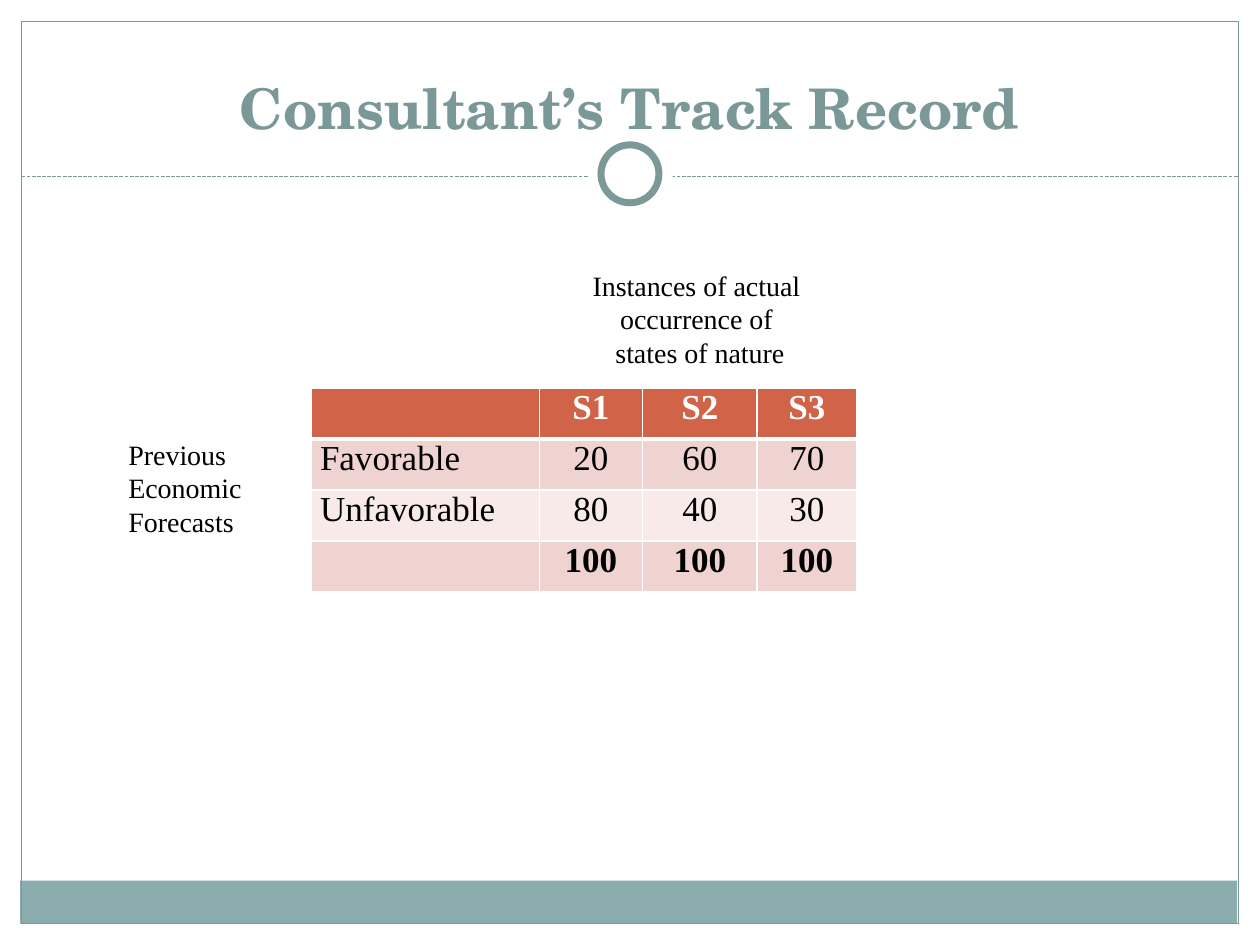
"""Build the slide showing a consultant's track record."""
from lxml import etree
from pptx import Presentation
from pptx.dml.color import RGBColor
from pptx.enum.dml import MSO_LINE
from pptx.enum.shapes import MSO_CONNECTOR, MSO_SHAPE
from pptx.enum.text import MSO_ANCHOR, PP_ALIGN
from pptx.oxml import parse_xml
from pptx.oxml.ns import nsdecls, qn
from pptx.util import Inches, Pt

RECT, OVAL = MSO_SHAPE.RECTANGLE, MSO_SHAPE.OVAL
LEFT, MID = PP_ALIGN.LEFT, PP_ALIGN.CENTER
SERIF = "Times New Roman"
TEAL = "7C999A"


def paint(color, value):
    color.rgb = RGBColor.from_string(value)


def write(para, text, size, value, bold=False, face=SERIF, align=LEFT):
    para.alignment = align
    run = para.add_run()
    run.text = text
    run.font.name = face
    run.font.size = Pt(size)
    run.font.bold = bold
    paint(run.font.color, value)


prs = Presentation()
prs.slide_width, prs.slide_height = Inches(10), Inches(7.5)
slide = prs.slides.add_slide(prs.slide_layouts[5])
shapes = slide.shapes

rule = shapes.add_connector(MSO_CONNECTOR.STRAIGHT, Inches(0.17), Inches(1.4), Inches(9.83), Inches(1.4))
paint(rule.line.color, TEAL)
rule.line.width = Pt(0.75)
rule.line.dash_style = MSO_LINE.SQUARE_DOT
etree.SubElement(rule._element.spPr, qn("a:effectLst"))

decor = [
    (RECT, (0.16, 6.99, 9.66, 0.34), "8CADAE", 0),
    (RECT, (0.17, 0.17, 9.66, 7.16), None, 0.75),
    (OVAL, (4.67, 1.05, 0.67, 0.67), "FFFFFF", 0),
    (OVAL, (4.77, 1.15, 0.46, 0.46), "FFFFFF", 4),
]
for kind, box, fill, width in decor:
    shape = shapes.add_shape(kind, *map(Inches, box))
    shape.shadow.inherit = False
    if fill:
        shape.fill.solid()
        paint(shape.fill.fore_color, fill)
    else:
        shape.fill.background()
    if width:
        paint(shape.line.color, TEAL)
        shape.line.width = Pt(width)
    else:
        shape.line.fill.background()

title = shapes.title
title.left, title.top, title.width, title.height = map(Inches, (0.75, 0.5, 8.5, 0.67))
title.text_frame.vertical_anchor = MSO_ANCHOR.BOTTOM
write(title.text_frame.paragraphs[0], "Consultant’s Track Record", 32, "7B9899", True, "TeX Gyre Schola", MID)

rows = [
    ("", "S1", "S2", "S3"),
    ("Favorable", "20", "60", "70"),
    ("Unfavorable", "80", "40", "30"),
    ("", "100", "100", "100"),
]
fills = ["D16349", "EED3D0", "F7EAE9", "EED3D0"]
table = shapes.add_table(4, 4, Inches(2.47), Inches(3.08), Inches(4.33), Inches(1.62)).table
for col, width in zip(table.columns, (1.81, 0.82, 0.91, 0.79)):
    col.width = Inches(width)
for r, row in enumerate(rows):
    for c, text in enumerate(row):
        cell = table.cell(r, c)
        cell.margin_left = cell.margin_right = Inches(0.07)
        cell.margin_top = cell.margin_bottom = 0
        cell.fill.solid()
        paint(cell.fill.fore_color, fills[r])
        if text:
            ink = "000000" if r else "FFFFFF"
            write(cell.text_frame.paragraphs[0], text, 20, ink, r in (0, 3), align=MID if c else LEFT)
        for i, side in enumerate("LRTB"):
            thick = 3 if (r, side) in ((0, "B"), (1, "T")) else 1
            edge = parse_xml(
                f'<a:ln{side} {nsdecls("a")} w="{Pt(thick)}"><a:solidFill>'
                f'<a:srgbClr val="FFFFFF"/></a:solidFill></a:ln{side}>'
            )
            cell._tc.tcPr.insert(i, edge)

labels = [
    ((0.92, 3.42, 1.19, 0.91), LEFT, ("Previous", "Economic", "Forecasts")),
    ((4.5, 2.08, 2.11, 0.91), MID, ("Instances of actual ", "occurrence of ", "states of nature")),
]
for box, align, lines in labels:
    frame = shapes.add_textbox(*map(Inches, box)).text_frame
    frame.word_wrap = False
    for i, text in enumerate(lines):
        para = frame.add_paragraph() if i else frame.paragraphs[0]
        write(para, text, 16, "000000", align=align)

prs.save("out.pptx")
